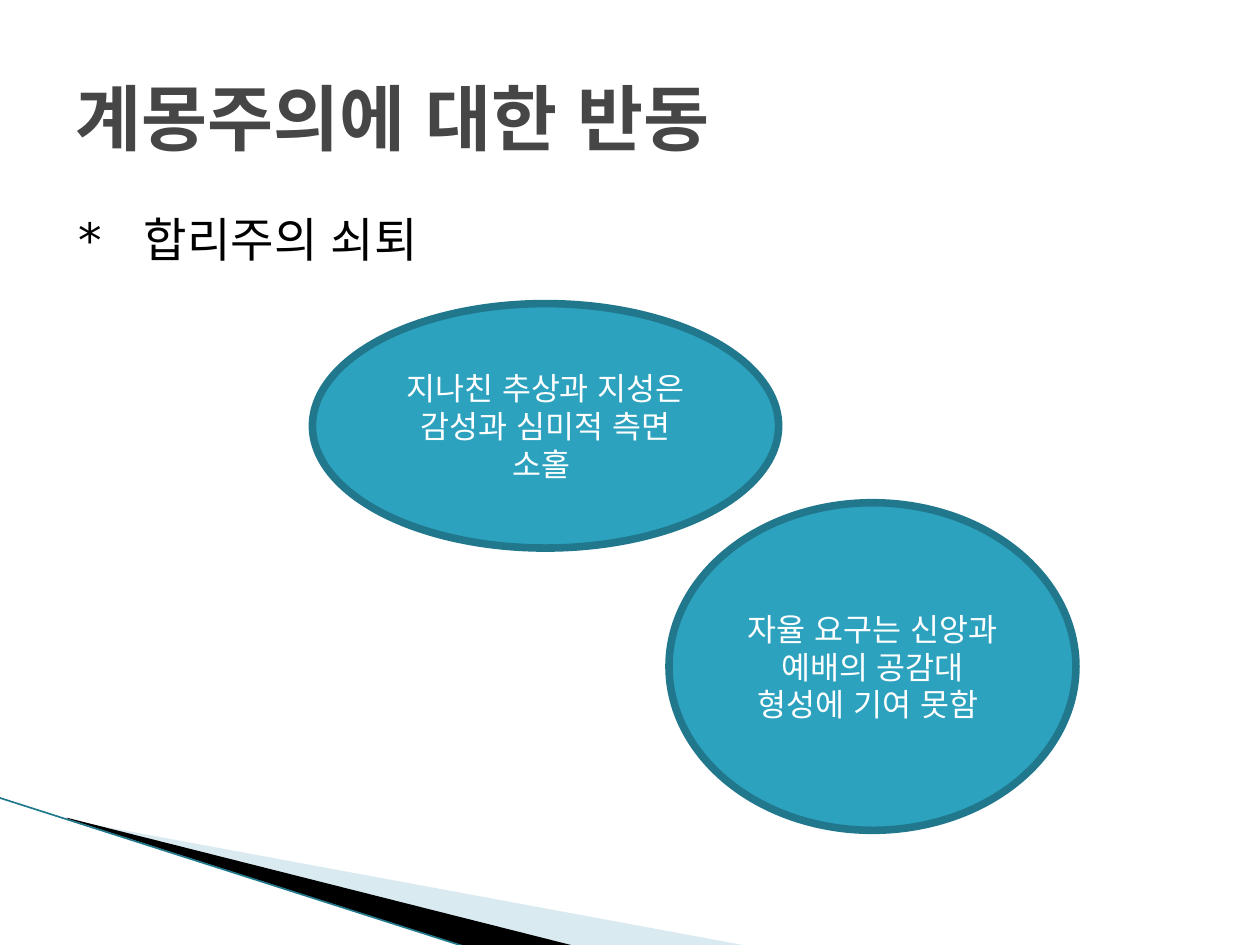
from lxml.etree import SubElement
from pptx import Presentation
from pptx.dml.color import RGBColor
from pptx.enum.lang import MSO_LANGUAGE_ID
from pptx.enum.shapes import MSO_CONNECTOR, MSO_SHAPE
from pptx.enum.text import MSO_ANCHOR, MSO_AUTO_SIZE, PP_ALIGN
from pptx.oxml.ns import qn
from pptx.util import Inches, Pt

FONT = "DejaVu Sans Mono"
KOREAN_FONT = "Liberation Sans"
COLORS = {
    "title": "464646",
    "body": "000000",
    "label": "FFFFFF",
    "oval": "2DA2BF",
    "edge": "21788D",
    "pale": "A0CBDC",
    "dark": "000000",
}
TITLE = ("계몽주의에 대한 반동", (0.5, 0.3, 9, 1.25))
BODY = ("*\t합리주의 쇠퇴", (0.5, 1.62, 9, 4.95))
OVALS = [
    ("지나친 추상과 지성은 감성과 심미적 측면 소홀 ", (2.48, 2.41, 3.7, 1.94)),
    ("자율 요구는 신앙과 예배의 공감대 형성에 기여 못함 ", (5.31, 3.99, 3.23, 2.6)),
]
WEDGES = [
    ("pale", 40, [(0.55, 6.51), (5.95, 7.51), (4.56, 7.51), (0.55, 6.5)]),
    ("dark", 100, [(0.53, 6.49), (4.57, 7.51), (3.72, 7.52), (0.54, 6.5)]),
]
EDGE_LINE = [(-0.01, 6.33), (3.71, 7.52)]


def color(name):
    return RGBColor.from_string(COLORS[name])


def inches(values):
    return [Inches(value) for value in values]


def write(shape, text, size, color_name, align, anchor, bold=False):
    frame = shape.text_frame
    frame.word_wrap = True
    frame.auto_size = MSO_AUTO_SIZE.NONE
    frame.vertical_anchor = anchor
    para = frame.paragraphs[0]
    para.alignment = align
    para.space_before = Pt(0)
    span = para.add_run()
    span.text = text
    font = span.font
    font.name = FONT
    font.size = Pt(size)
    font.bold = bold
    font.color.rgb = color(color_name)
    font.language_id = MSO_LANGUAGE_ID.KOREAN
    SubElement(span._r.get_or_add_rPr(), qn("a:ea")).set("typeface", KOREAN_FONT)
    return para


def place(shape, box):
    shape.left, shape.top, shape.width, shape.height = inches(box)


def add_wedge(page, color_name, opacity, points):
    start, *rest = [inches(point) for point in points]
    builder = page.shapes.build_freeform(*start)
    builder.add_line_segments(rest, close=True)
    wedge = builder.convert_to_shape()
    wedge.shadow.inherit = False
    wedge.line.fill.background()
    wedge.fill.solid()
    wedge.fill.fore_color.rgb = color(color_name)
    if opacity < 100:
        fill_color = wedge._element.spPr.find(".//" + qn("a:srgbClr"))
        SubElement(fill_color, qn("a:alpha")).set("val", str(opacity * 1000))


def add_edge_line(page):
    start, end = [inches(point) for point in EDGE_LINE]
    edge = page.shapes.add_connector(MSO_CONNECTOR.STRAIGHT, *start, *end)
    edge.line.color.rgb = color("edge")
    edge.line.width = Pt(0.95)
    SubElement(edge._element.spPr, qn("a:effectLst"))


def add_oval(page, text, box):
    oval = page.shapes.add_shape(MSO_SHAPE.OVAL, *inches(box))
    oval.shadow.inherit = False
    oval.fill.solid()
    oval.fill.fore_color.rgb = color("oval")
    oval.line.color.rgb = color("edge")
    oval.line.width = Pt(4.33)
    write(oval, text, 18, "label", PP_ALIGN.CENTER, MSO_ANCHOR.MIDDLE)


def main():
    deck = Presentation()
    deck.slide_width, deck.slide_height = Inches(10), Inches(7.5)
    page = deck.slides.add_slide(deck.slide_layouts[1])

    for wedge in WEDGES:
        add_wedge(page, *wedge)
    add_edge_line(page)

    title, body = page.shapes.title, page.placeholders[1]
    place(title, TITLE[1])
    write(title, TITLE[0], 41, "title", PP_ALIGN.LEFT, MSO_ANCHOR.MIDDLE, bold=True)

    place(body, BODY[1])
    para = write(body, BODY[0], 27, "body", PP_ALIGN.LEFT, MSO_ANCHOR.TOP)
    properties = para._p.get_or_add_pPr()
    properties.set("marL", str(Inches(0.54)))
    properties.set("indent", str(-Inches(0.54)))
    SubElement(properties, qn("a:buNone"))

    for text, box in OVALS:
        add_oval(page, text, box)
    deck.save("out.pptx")


if __name__ == "__main__":
    main()
